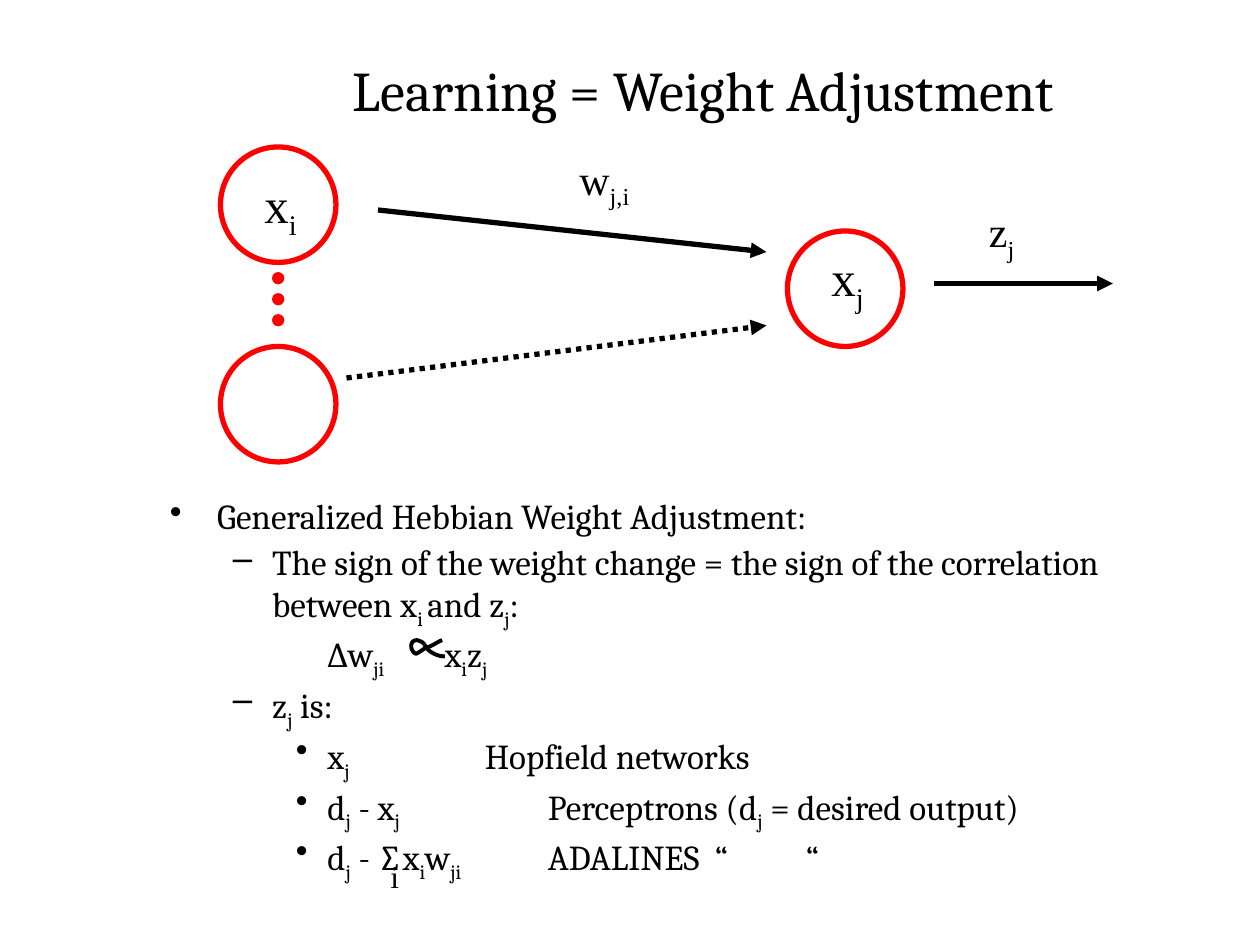
from pptx import Presentation
from pptx.dml.color import RGBColor
from pptx.enum.dml import MSO_LINE
from pptx.enum.shapes import MSO_CONNECTOR, MSO_SHAPE
from pptx.enum.text import MSO_ANCHOR, PP_ALIGN
from pptx.oxml.ns import qn
from pptx.util import Pt
from lxml import etree

BLACK = RGBColor(0, 0, 0)
RED = RGBColor(255, 0, 0)
SERIF, LABEL_FONT = "Cambria", "Times New Roman"
OVAL, STRAIGHT = MSO_SHAPE.OVAL, MSO_CONNECTOR.STRAIGHT
DOTTED = MSO_LINE.ROUND_DOT
MIDDLE, CENTER = MSO_ANCHOR.MIDDLE, PP_ALIGN.CENTER

# Left margin and hanging indent of each outline level
INDENTS = [(27, -27), (58.5, -22.5), (90, -18)]
# Level, bullet, text, width added to each "~" gap
OUTLINE = [
    (0, "•", "Generalized Hebbian Weight Adjustment:", 0),
    (1, "–", "The sign of the weight change = the sign of the correlation "
             "between x|i |and z|j|:", 0),
    (2, None, "∆w|ji|~x|i|z|j|", 30),
    (1, "–", "z|j| is:", 0),
    (2, "•", "x|j|\t\t\tHopfield networks", 0),
    (2, "•", "d|j| - x|j|\t\t\tPerceptrons (d|j| = desired output)", 0),
    (2, "•", "d|j| - ∑x|i|w|ji|\t\tADALINES  “~“", 40),
]
# Cubic segments of the proportional-to sign, after its first point
PROPORTIONAL_START = (162.7, 83.8)
PROPORTIONAL = [
    ((159.1, 85.2), (157, 87.4), (153.4, 88.1)),
    ((149, 91), (150.5, 90.2), (147.6, 91.7)),
    ((144, 89.5), (144, 83.8), (148.3, 83.8)),
    ((153.4, 85.2), (151.9, 86.6), (154.8, 89.5)),
    ((157.7, 91.7), (160.6, 93.1), (164.2, 93.1)),
]


def write(paragraph, text, size, font=SERIF, color=BLACK, gap=0):
    """Parts between bars are subscripts; "~" is a space widened by gap points."""
    for number, part in enumerate(text.split("|")):
        for piece in part.replace("~", "\n~\n").split("\n"):
            if not piece:
                continue
            run = paragraph.add_run()
            run.text = piece.replace("~", " ")
            run.font.size, run.font.name = Pt(size), font
            run.font.color.rgb = color
            if number % 2:
                run.font._element.set("baseline", "-25000")
            if piece == "~":
                run.font._element.set("spc", str(gap * 100))


def add_label(slide, text, left, top, size, width, height, wrap=False):
    frame = slide.shapes.add_textbox(Pt(left), Pt(top), Pt(width), Pt(height)).text_frame
    frame.word_wrap = wrap
    write(frame.paragraphs[0], text, size, font=LABEL_FONT)


def add_circle(slide, left, top, size, weight, filled=False):
    circle = slide.shapes.add_shape(OVAL, Pt(left), Pt(top), Pt(size), Pt(size))
    circle.shadow.inherit = False
    if filled:
        circle.fill.solid()
        circle.fill.fore_color.rgb = RED
    else:
        circle.fill.background()
    circle.line.color.rgb, circle.line.width = RED, Pt(weight)


def add_arrow(slide, x1, y1, x2, y2, dash=None):
    arrow = slide.shapes.add_connector(STRAIGHT, Pt(x1), Pt(y1), Pt(x2), Pt(y2))
    arrow.line.color.rgb, arrow.line.width = BLACK, Pt(3)
    if dash:
        arrow.line.dash_style = dash
    etree.SubElement(arrow.line._get_or_add_ln(), qn("a:tailEnd"), type="triangle")
    etree.SubElement(arrow._element.spPr, qn("a:effectLst"))


def add_title(slide, left, top, width, height):
    title = slide.shapes.title
    title.left, title.top = Pt(left), Pt(top)
    title.width, title.height = Pt(width), Pt(height)
    title.text_frame.vertical_anchor = MIDDLE
    heading = title.text_frame.paragraphs[0]
    heading.alignment = CENTER
    write(heading, "Learning = Weight Adjustment", 32)


def add_network(slide, left, top):
    # Neurons, with dots standing for the inputs left out
    for x, y in [(0, 0), (324, 48), (0, 114)]:
        add_circle(slide, left + x, top + y, 66, 3)
    for number in range(3):
        add_circle(slide, left + 30, top + 72 + 12 * number, 6, 1, filled=True)

    # Weighted inputs and the output
    for x1, y1, x2, y2, dash in [(90, 36, 312, 60, None),
                                 (72, 132, 312, 102, DOTTED),
                                 (408, 78, 510, 78, None)]:
        add_arrow(slide, left + x1, top + y1, left + x2, top + y2, dash)

    # Neuron names, then arrow names
    for text, x, y in [("x|i|", 18, 12), ("x|j|", 342, 54)]:
        add_label(slide, text, left + x, top + y, 28, 34, 41)
    for text, x, y in [("w|j,i|", 198, 0), ("z|j|", 432, 30)]:
        add_label(slide, text, left + x, top + y, 24, 54, 36, wrap=True)


def add_proportional_sign(slide, left, top, steps=10):
    start, points = PROPORTIONAL_START, []
    for segment in PROPORTIONAL:
        controls = (start, *segment)
        for step in range(1, steps + 1):
            t = step / steps
            weights = ((1 - t) ** 3, 3 * t * (1 - t) ** 2, 3 * t * t * (1 - t), t ** 3)
            x, y = (sum(w * p[axis] for w, p in zip(weights, controls)) for axis in (0, 1))
            points.append((Pt(left + x), Pt(top + y)))
        start = segment[-1]
    x, y = PROPORTIONAL_START
    builder = slide.shapes.build_freeform(Pt(left + x), Pt(top + y))
    builder.add_line_segments(points, close=False)
    sign = builder.convert_to_shape()
    sign.shadow.inherit = False
    sign.fill.background()
    sign.line.color.rgb, sign.line.width = BLACK, Pt(2.25)


def add_outline(slide, left, top, width, height):
    frame = slide.shapes.add_textbox(Pt(left), Pt(top), Pt(width), Pt(height)).text_frame
    frame.word_wrap = True
    for number, (level, bullet, text, gap) in enumerate(OUTLINE):
        paragraph = frame.add_paragraph() if number else frame.paragraphs[0]
        paragraph.level = level
        paragraph.line_spacing, paragraph.space_before = 0.9, Pt(4.4)
        margin, hanging = INDENTS[level]
        properties = paragraph._p.get_or_add_pPr()
        properties.set("marL", str(Pt(margin)))
        properties.set("indent", str(Pt(hanging) if bullet else 0))
        if bullet:
            etree.SubElement(properties, qn("a:buChar"), char=bullet)
        write(paragraph, text, 20, gap=gap)

    # Sign in the learning rule and index under the sum
    add_proportional_sign(slide, left, top)
    add_label(slide, "i", left + 126, top + 204, 18, 19.5, 29)


def main():
    deck = Presentation()
    deck.slide_width, deck.slide_height = Pt(720), Pt(540)
    slide = deck.slides.add_slide(deck.slide_layouts[5])
    add_title(slide, 192, 24, 420, 54)
    add_network(slide, 126, 84)
    add_outline(slide, 90, 282, 612, 246)
    deck.save("out.pptx")


if __name__ == "__main__":
    main()
